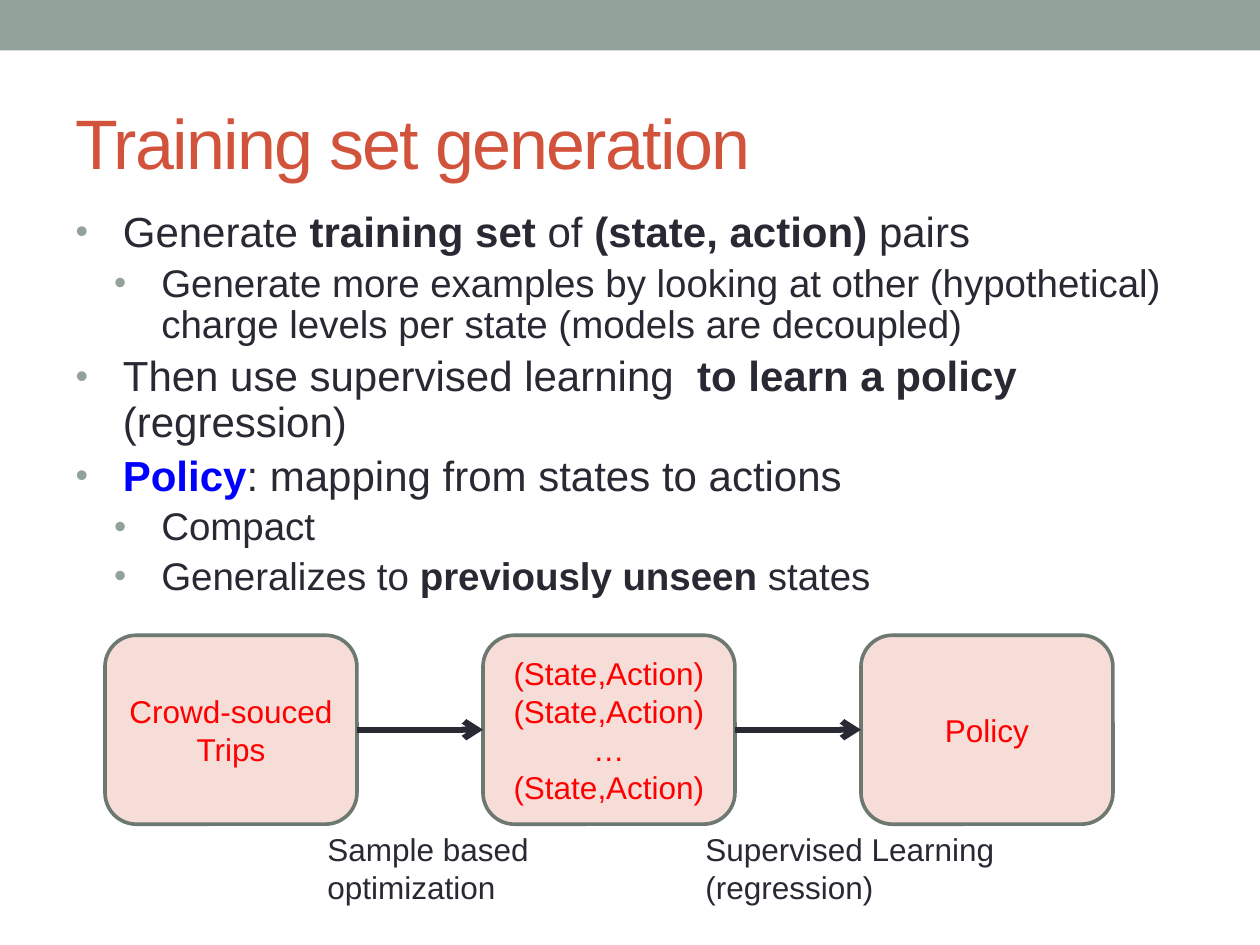
from lxml import etree
from pptx import Presentation
from pptx import util as u
from pptx.dml.color import RGBColor
from pptx.enum import shapes, text
from pptx.oxml.ns import qn

Pt = u.Pt
INK, SAGE, RUST, BLUE, RED = "292934", "93A299", "D2533C", "0000FF", "FF0000"
BULLETS = [
    (0, "Generate *training set *of *(state, action) *pairs"),
    (1, "Generate more examples by looking at other (hypothetical) "
        "charge levels per state (models are decoupled)"),
    (0, "Then use supervised learning  *to learn a policy *(regression)"),
    (0, "*Policy*: mapping from states to actions"),
    (1, "Compact"),
    (1, "Generalizes to *previously unseen *states"),
]
LEVELS = [
    {"size": 24, "margin": 27, "bullet": 85},
    {"size": 22, "margin": 49, "bullet": 90},
]
STEPS = [
    ["Crowd-souced Trips"],
    ["(State,Action)", "(State,Action)", "…", "(State,Action)"],
    ["Policy"],
]
LABELS = [
    ["Sample based", "optimization"],
    ["Supervised Learning", "(regression)"],
]


def color(value):
    return RGBColor.from_string(value)


def apply(target, values):
    for name, value in values.items():
        setattr(target, name, value)


def place(shape, left, top, width, height):
    apply(shape, {"left": Pt(left), "top": Pt(top),
                  "width": Pt(width), "height": Pt(height)})


def add_run(paragraph, words, size, ink, bold=False):
    run = paragraph.add_run()
    run.text = words
    apply(run.font, {"name": "Arial", "size": Pt(size), "bold": bold})
    run.font.color.rgb = color(ink)
    return run


def fill_lines(frame, lines, ink, alignment):
    for index, line in enumerate(lines):
        paragraph = frame.paragraphs[0] if index == 0 else frame.add_paragraph()
        paragraph.alignment = alignment
        add_run(paragraph, line, 18, ink)


def add_bullet(paragraph, percent):
    properties = paragraph._p.get_or_add_pPr()
    bullet_color = etree.SubElement(properties, qn("a:buClr"))
    etree.SubElement(bullet_color, qn("a:srgbClr"), val=SAGE)
    etree.SubElement(properties, qn("a:buSzPct"), val=str(percent * 1000))
    etree.SubElement(properties, qn("a:buFont"), typeface="Arial")
    etree.SubElement(properties, qn("a:buChar"), char="•")


def add_band(slide, left, top, width, height):
    band = slide.shapes.add_shape(shapes.MSO_SHAPE.RECTANGLE,
                                  Pt(left), Pt(top), Pt(width), Pt(height))
    band.shadow.inherit = False
    band.fill.solid()
    band.fill.fore_color.rgb = color(SAGE)
    band.line.fill.background()


def fill_title(slide, left, top, width, height):
    title = slide.shapes.title
    place(title, left, top, width, height)
    apply(title.text_frame, {"vertical_anchor": text.MSO_ANCHOR.MIDDLE,
                             "auto_size": text.MSO_AUTO_SIZE.NONE})
    paragraph = title.text_frame.paragraphs[0]
    paragraph.alignment = text.PP_ALIGN.LEFT
    run = add_run(paragraph, "Training set generation", 40, RUST)
    run.font._element.set("spc", "-100")


def fill_body(slide, left, top, width, height):
    body = slide.placeholders[1]
    place(body, left, top, width, height)
    frame = body.text_frame
    frame.auto_size = text.MSO_AUTO_SIZE.NONE
    for index, (level, line) in enumerate(BULLETS):
        style = LEVELS[level]
        paragraph = frame.paragraphs[0] if index == 0 else frame.add_paragraph()
        apply(paragraph, {"level": level, "line_spacing": 0.9,
                          "space_before": Pt(style["size"] * 0.2)})
        properties = paragraph._p.get_or_add_pPr()
        properties.set("marL", str(Pt(style["margin"])))
        properties.set("indent", str(Pt(-27)))
        add_bullet(paragraph, style["bullet"])
        for part, words in enumerate(line.split("*")):
            if words:
                ink = BLUE if words == "Policy" else INK
                add_run(paragraph, words, style["size"], ink, part % 2 == 1)


def add_step(slide, lines, left, top, width, height):
    step = slide.shapes.add_shape(shapes.MSO_SHAPE.ROUNDED_RECTANGLE,
                                  Pt(left), Pt(top), Pt(width), Pt(height))
    step.shadow.inherit = False
    step.fill.solid()
    step.fill.fore_color.rgb = color("F6DDD8")
    step.line.color.rgb = color("6D7871")
    step.line.width = Pt(2.08)
    apply(step.text_frame, {"word_wrap": True,
                            "vertical_anchor": text.MSO_ANCHOR.MIDDLE})
    fill_lines(step.text_frame, lines, RED, text.PP_ALIGN.CENTER)
    return step


def add_arrow(slide, start, end):
    arrow = slide.shapes.add_connector(shapes.MSO_CONNECTOR.STRAIGHT, 0, 0, 0, 0)
    arrow.begin_connect(start, 3)
    arrow.end_connect(end, 1)
    arrow.line.color.rgb = color(INK)
    arrow.line.width = Pt(3.5)
    etree.SubElement(arrow.line._get_or_add_ln(), qn("a:tailEnd"), type="arrow")
    etree.SubElement(arrow._element.spPr, qn("a:effectLst"))


def add_label(slide, lines, left, top, width, height):
    label = slide.shapes.add_textbox(Pt(left), Pt(top), Pt(width), Pt(height))
    apply(label.text_frame, {"word_wrap": False,
                             "auto_size": text.MSO_AUTO_SIZE.SHAPE_TO_FIT_TEXT})
    fill_lines(label.text_frame, lines, INK, text.PP_ALIGN.LEFT)


def add_flow(slide, left, top, width, height):
    gap = 72
    step_width = (width - gap * (len(STEPS) - 1)) / len(STEPS)
    pitch = step_width + gap
    steps = [add_step(slide, lines, left + index * pitch, top, step_width, height)
             for index, lines in enumerate(STEPS)]
    for start, end in zip(steps, steps[1:]):
        add_arrow(slide, start, end)
    for index, (lines, label_width) in enumerate(zip(LABELS, (130, 181))):
        label_left = left + index * pitch + step_width - 24
        add_label(slide, lines, label_left, top + height, label_width, 51)


def main():
    presentation = Presentation()
    apply(presentation, {"slide_width": Pt(720), "slide_height": Pt(540)})
    slide = presentation.slides.add_slide(presentation.slide_layouts[1])
    add_band(slide, 0, 0, 720, 28.8)
    fill_title(slide, 36, 42, 648, 78)
    fill_body(slide, 36, 117, 648, 356)
    add_flow(slide, 60, 363, 576, 108)
    presentation.save("out.pptx")


if __name__ == "__main__":
    main()
